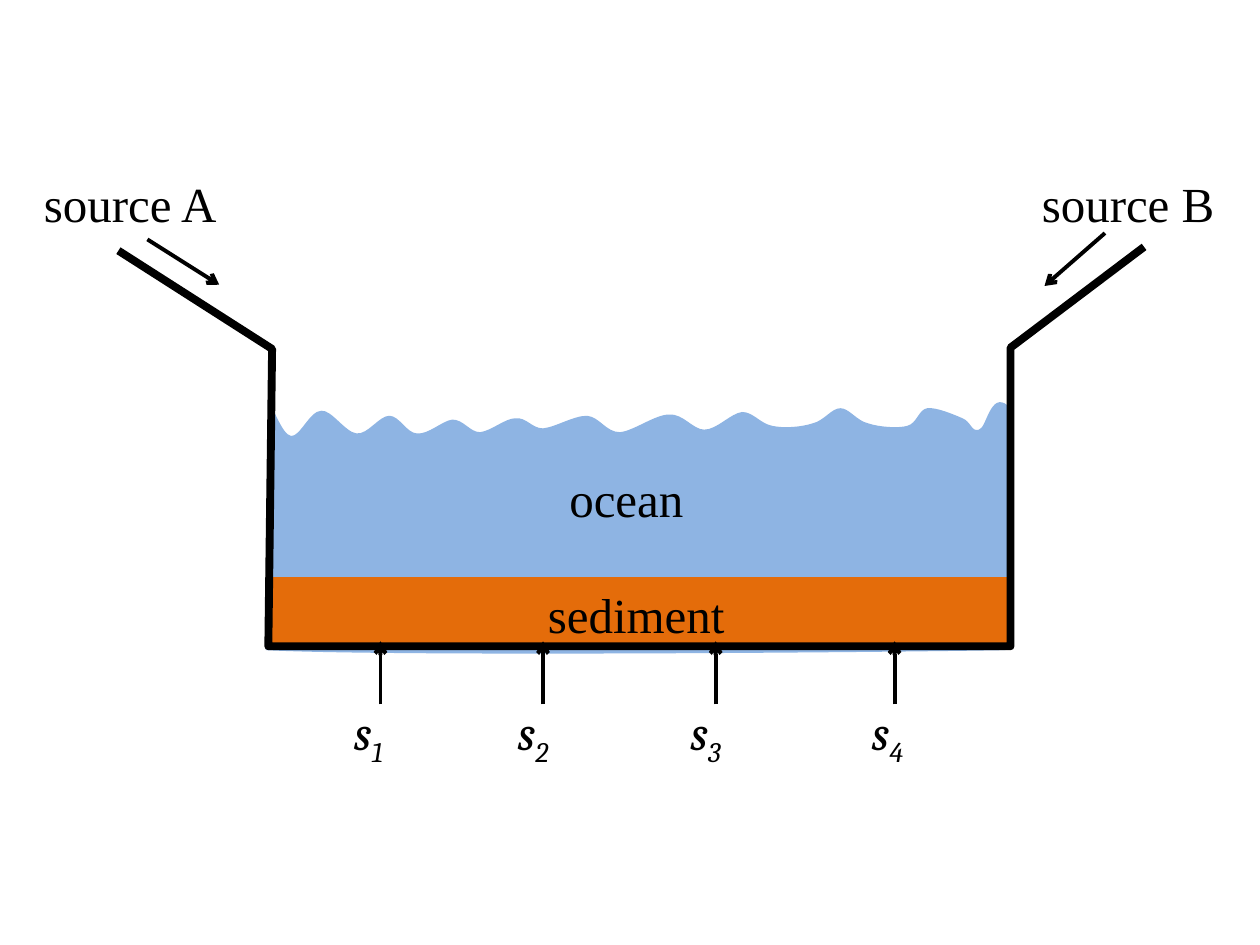
"""Build a slide of an ocean basin with two sources and four sediment inputs."""
from lxml.etree import Element, SubElement
from pptx import Presentation
from pptx.dml.color import RGBColor
from pptx.enum.shapes import MSO_CONNECTOR, MSO_SHAPE
from pptx.oxml.ns import qn
from pptx.util import Inches, Pt

BLACK = RGBColor(0x00, 0x00, 0x00)
WATER = RGBColor(0x8E, 0xB4, 0xE3)
SEDIMENT = RGBColor(0xE4, 0x6C, 0x0A)

WATER_START = (2.14, 3.21)
WATER_CURVES = [
    [(2.17, 3.23), (2.24, 3.45), (2.31, 3.46)],
    [(2.38, 3.47), (2.46, 3.26), (2.55, 3.26)],
    [(2.63, 3.25), (2.74, 3.43), (2.83, 3.44)],
    [(2.92, 3.45), (3.01, 3.30), (3.09, 3.30)],
    [(3.17, 3.30), (3.23, 3.44), (3.31, 3.44)],
    [(3.40, 3.45), (3.51, 3.34), (3.59, 3.33)],
    [(3.68, 3.33), (3.73, 3.43), (3.81, 3.43)],
    [(3.90, 3.42), (4.01, 3.32), (4.09, 3.32)],
    [(4.18, 3.31), (4.22, 3.40), (4.31, 3.40)],
    [(4.41, 3.39), (4.55, 3.30), (4.66, 3.30)],
    [(4.76, 3.31), (4.81, 3.43), (4.92, 3.43)],
    [(5.03, 3.42), (5.20, 3.29), (5.31, 3.29)],
    [(5.42, 3.28), (5.50, 3.41), (5.59, 3.41)],
    [(5.69, 3.41), (5.80, 3.28), (5.89, 3.27)],
    [(5.98, 3.27), (6.03, 3.36), (6.13, 3.38)],
    [(6.22, 3.40), (6.36, 3.39), (6.45, 3.36)],
    [(6.54, 3.34), (6.60, 3.24), (6.67, 3.24)],
    [(6.74, 3.24), (6.80, 3.34), (6.89, 3.36)],
    [(6.98, 3.39), (7.13, 3.40), (7.20, 3.38)],
    [(7.28, 3.36), (7.29, 3.25), (7.36, 3.24)],
    [(7.43, 3.23), (7.57, 3.29), (7.64, 3.32)],
    [(7.71, 3.35), (7.71, 3.43), (7.77, 3.41)],
    [(7.83, 3.40), (7.86, 3.10), (8.00, 3.22)],
    [(8.01, 3.60), (8.02, 4.65), (7.98, 5.16)],
    [(6.89, 5.18), (3.04, 5.21), (2.11, 5.16)],
    [(2.14, 4.39), (2.14, 4.11), (2.16, 3.30)],
]
BASIN = [(0.94, 1.99), (2.16, 2.77), (2.13, 5.13), (8.02, 5.13), (8.02, 2.76), (9.08, 1.96)]
INPUTS = [(3.02, 2.71), (4.31, 4.01), (5.68, 5.38), (7.10, 6.82)]
SOURCE_ARROWS = [(8.77, 1.85, 8.29, 2.27), (1.17, 1.90, 1.74, 2.26)]

serif = {"name": "Times New Roman", "size": Pt(28)}
symbol = {"name": "Cambria", "size": Pt(28), "italic": True}


def add_outline(points, close):
    corners = [(Inches(x), Inches(y)) for x, y in points]
    builder = page.shapes.build_freeform(*corners[0])
    builder.add_line_segments(corners[1:], close=close)
    outline = builder.convert_to_shape()
    outline.shadow.inherit = False
    return outline


def add_label(left, top, width, text, style, subscript=""):
    box = page.shapes.add_textbox(Inches(left), Inches(top), Inches(width), Inches(0.57))
    box.text_frame.word_wrap = True
    para = box.text_frame.paragraphs[0]
    for part in filter(None, (text, subscript)):
        span = para.add_run()
        span.text = part
        span.font.color.rgb = BLACK
        for key, value in style.items():
            setattr(span.font, key, value)
    if subscript:
        span.font._element.set("baseline", "-25000")


deck = Presentation()
deck.slide_width, deck.slide_height = Inches(10), Inches(7.5)
page = deck.slides.add_slide(deck.slide_layouts[6])

water = add_outline([WATER_START, *sum(WATER_CURVES, []), WATER_START], close=True)
segments = list(water._element.iter(qn("a:lnTo")))
for index in range(0, 3 * len(WATER_CURVES), 3):
    curve = Element(qn("a:cubicBezTo"))
    segments[index].addprevious(curve)
    for segment in segments[index:index + 3]:
        curve.append(segment[0])
        segment.getparent().remove(segment)
water.fill.solid()
water.fill.fore_color.rgb = WATER
water.line.fill.background()

sediment = page.shapes.add_shape(
    MSO_SHAPE.RECTANGLE, Inches(2.12), Inches(4.58), Inches(5.88), Inches(0.55))
sediment.shadow.inherit = False
sediment.fill.solid()
sediment.fill.fore_color.rgb = SEDIMENT
sediment.line.fill.background()

basin = add_outline(BASIN, close=False)
basin.fill.background()
basin.line.color.rgb = BLACK
basin.line.width = Pt(4.5)

input_arrows = [(x, 5.59, x, 5.09) for x, left in INPUTS]
for ends in input_arrows + SOURCE_ARROWS:
    arrow = page.shapes.add_connector(MSO_CONNECTOR.STRAIGHT, *map(Inches, ends))
    arrow.line.color.rgb = BLACK
    arrow.line.width = Pt(2.25)
    SubElement(arrow.line._get_or_add_ln(), qn("a:tailEnd"), type="arrow")
    SubElement(arrow._element.spPr, qn("a:effectLst"))

for left, top, width, text in [
    (0.25, 1.33, 2.00, "source A"),
    (4.42, 3.67, 1.25, "ocean"),
    (4.25, 4.59, 1.92, "sediment"),
    (8.17, 1.33, 1.67, "source B"),
]:
    add_label(left, top, width, text, serif)

for number, (x, left) in enumerate(INPUTS, start=1):
    add_label(left, 5.52, 0.62, "s", symbol, subscript=str(number))

deck.save("out.pptx")
